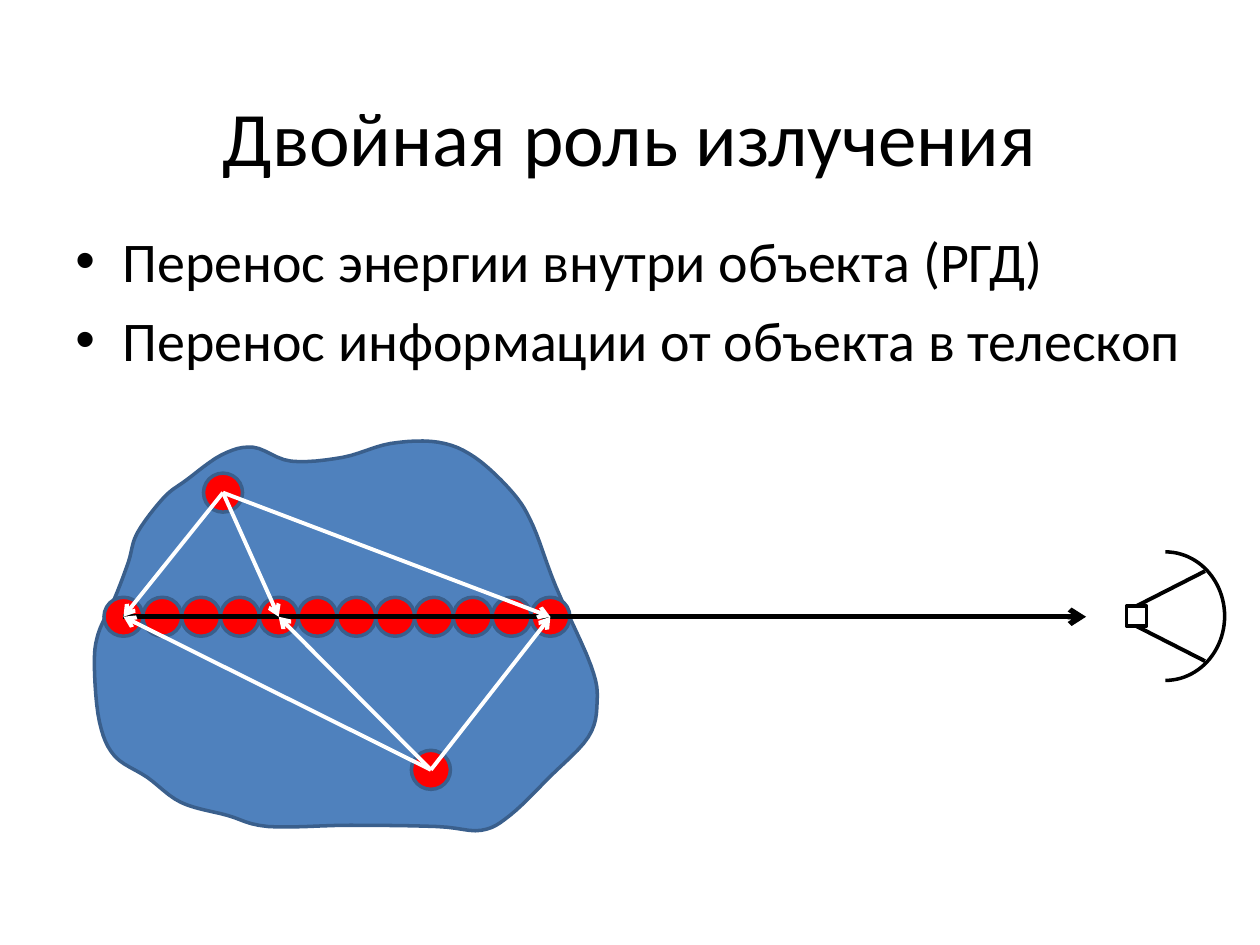
import pptx
import pptx.util
import pptx.dml.color
import pptx.enum.shapes
import pptx.enum.text
import pptx.oxml.ns
import lxml.etree

COLORS = {"text": "000000", "cloud": "4F81BD", "edge": "3A5F8C",
          "cell": "FF0000", "ray": "FFFFFF", "sight": "000000"}
FONT = "Calibri"
COLUMNS, ROWS = 1000, 750
STEP = pptx.util.Inches(10) // COLUMNS

TITLE_BOX = (75, 23, 850, 169)
POINTS_BOX = (50, 175, 900, 169)
CLOUD_BOX = (75, 351, 399, 308)
TELESCOPE_BOX = (894, 438, 78, 102)

CLOUD_SIDES = {
    "left": [(126, 4), (101, 10), (73, 30), (55, 44), (34, 72), (27, 95), (16, 124),
             (3, 152), (0, 178), (4, 222)],
    "bottom": [(16, 249), (42, 266), (69, 286), (105, 296), (138, 305), (203, 304),
               (272, 305), (307, 308), (330, 296)],
    "right": [(361, 266), (392, 234), (399, 206), (394, 177), (366, 114), (348, 66)],
    "top": [(332, 40), (302, 12), (273, 0), (235, 1), (197, 12), (156, 15)],
}
CURVE_STEPS = 6

CELL_SIZE = 31
CELL_COUNT, CELL_GAP = 12, 30.8
SIGHT_START, SIGHT_ROW, SIGHT_END = 23, 138.5, 787
SIGHT_CELLS = [(SIGHT_START + CELL_GAP * index, SIGHT_ROW) for index in range(CELL_COUNT)]
HEATED_CELLS = [SIGHT_CELLS[index] for index in (0, 4, CELL_COUNT - 1)]
SOURCES = [(102, 40), (267, 260)]


def color(name):
    """Return the named colour."""
    return pptx.dml.color.RGBColor.from_string(COLORS[name])


def place(box, x, y):
    """Turn a grid point inside a box into slide lengths."""
    return int((box[0] + x) * STEP), int((box[1] + y) * STEP)


def paint(part, edge, width, fill=None):
    """Set the outline and fill of a shape."""
    part.shadow.inherit = False
    part.line.color.rgb = color(edge)
    part.line.width = pptx.util.Pt(width)
    if fill:
        part.fill.solid()
        part.fill.fore_color.rgb = color(fill)
    else:
        part.fill.background()


def add_preset(shapes, kind, box, x, y, width, height):
    """Add a preset shape at a grid point inside a box."""
    return shapes.add_shape(kind, *place(box, x, y), width * STEP, height * STEP)


def add_line(shapes, box, start, end, name, width, arrow=False):
    """Add a straight line between two grid points of a box."""
    line = shapes.add_connector(pptx.enum.shapes.MSO_CONNECTOR.STRAIGHT,
                                *place(box, *start), *place(box, *end))
    line.line.color.rgb = color(name)
    line.line.width = pptx.util.Pt(width)
    qn = pptx.oxml.ns.qn
    if arrow:
        outline = line._element.spPr.find(qn("a:ln"))
        lxml.etree.SubElement(outline, qn("a:tailEnd"), type="arrow")
    lxml.etree.SubElement(line._element.spPr, qn("a:effectLst"))


def add_cells(shapes, box, centres):
    """Draw red radiating cells around the given centres."""
    for x, y in centres:
        cell = add_preset(shapes, pptx.enum.shapes.MSO_SHAPE.OVAL, box,
                          x - CELL_SIZE / 2, y - CELL_SIZE / 2, CELL_SIZE, CELL_SIZE)
        paint(cell, "edge", 2, "cell")


def add_text(shapes, box, lines, size, anchor, align, bulleted=False):
    """Write paragraphs in a text box, with bullets if asked."""
    left, top, width, height = (value * STEP for value in box)
    frame = shapes.add_textbox(left, top, width, height).text_frame
    frame.word_wrap = True
    frame.vertical_anchor = anchor
    for index, words in enumerate(lines):
        paragraph = frame.add_paragraph() if index else frame.paragraphs[0]
        paragraph.alignment = align
        run = paragraph.add_run()
        run.text = words
        run.font.name = FONT
        run.font.size = pptx.util.Pt(size)
        run.font.color.rgb = color("text")
        if bulleted:
            add_bullet(paragraph, size)


def add_bullet(paragraph, size):
    """Give a paragraph a hanging bullet and a gap of a fifth of its size."""
    paragraph.space_before = pptx.util.Pt(size * 0.2)
    properties = paragraph._p.get_or_add_pPr()
    indent = int(37.5 * STEP)
    properties.set("marL", str(indent))
    properties.set("indent", str(-indent))
    qn = pptx.oxml.ns.qn
    lxml.etree.SubElement(properties, qn("a:buFont"), typeface="Arial")
    lxml.etree.SubElement(properties, qn("a:buChar"), char="•")


def spline(before, start, end, after, t):
    """Return the Catmull-Rom value between start and end at share t."""
    return start + t / 2 * (end - before
                            + t * (2 * before - 5 * start + 4 * end - after)
                            + t * t * (3 * (start - end) + after - before))


def smooth_loop(knots):
    """Return points of a smooth closed curve through the knots."""
    curve = []
    for index in range(len(knots)):
        nearby = [knots[(index + shift) % len(knots)] for shift in (-1, 0, 1, 2)]
        xs, ys = zip(*nearby)
        for step in range(CURVE_STEPS):
            t = step / CURVE_STEPS
            curve.append((spline(*xs, t), spline(*ys, t)))
    return curve


def add_cloud(shapes, box):
    """Draw the radiating object and the cells along the line of sight."""
    knots = [knot for side in CLOUD_SIDES.values() for knot in side]
    start, *rest = [place(box, x, y) for x, y in smooth_loop(knots)]
    builder = shapes.build_freeform(*start)
    builder.add_line_segments(rest, close=True)
    paint(builder.convert_to_shape(), "edge", 2, "cloud")
    add_cells(shapes, box, SIGHT_CELLS)


def add_telescope(shapes, box):
    """Draw the dish, the receiver and its two struts."""
    telescope = shapes.add_group_shape().shapes
    kinds = pptx.enum.shapes.MSO_SHAPE
    width, height = box[2:]
    middle, receiver_size = height / 2, 16
    half = receiver_size / 2
    dish = add_preset(telescope, kinds.ARC, box, -receiver_size, 0,
                      width + receiver_size, height)
    dish.adjustments[0], dish.adjustments[1] = 162, 54
    paint(dish, "sight", 2)
    receiver = add_preset(telescope, kinds.RECTANGLE, box, 0, middle - half,
                          receiver_size, receiver_size)
    paint(receiver, "sight", 2)
    for side in (-1, 1):
        add_line(telescope, box, (half, middle + half * side),
                 (width * 0.8, middle + height * 0.35 * side), "sight", 2.25)


def add_exchange(shapes, box):
    """Draw the inner sources and a ray from each to every heated cell."""
    add_cells(shapes, box, SOURCES)
    exchange = shapes.add_group_shape().shapes
    for source in SOURCES:
        for cell in HEATED_CELLS:
            add_line(exchange, box, source, cell, "ray", 2.25, arrow=True)


def main():
    """Build and save the slide."""
    deck = pptx.Presentation()
    deck.slide_width, deck.slide_height = COLUMNS * STEP, ROWS * STEP
    shapes = deck.slides.add_slide(deck.slide_layouts[6]).shapes
    anchors, aligns = pptx.enum.text.MSO_ANCHOR, pptx.enum.text.PP_ALIGN
    add_text(shapes, TITLE_BOX, ["Двойная роль излучения"], 44,
             anchors.MIDDLE, aligns.CENTER)
    add_text(shapes, POINTS_BOX,
             ["Перенос энергии внутри объекта (РГД)",
              "Перенос информации от объекта в телескоп"], 32,
             anchors.TOP, aligns.LEFT, bulleted=True)
    add_cloud(shapes, CLOUD_BOX)
    add_line(shapes, CLOUD_BOX, (SIGHT_START, SIGHT_ROW), (SIGHT_END, SIGHT_ROW),
             "sight", 3, arrow=True)
    add_telescope(shapes, TELESCOPE_BOX)
    add_exchange(shapes, CLOUD_BOX)
    deck.save("out.pptx")


if __name__ == "__main__":
    main()
